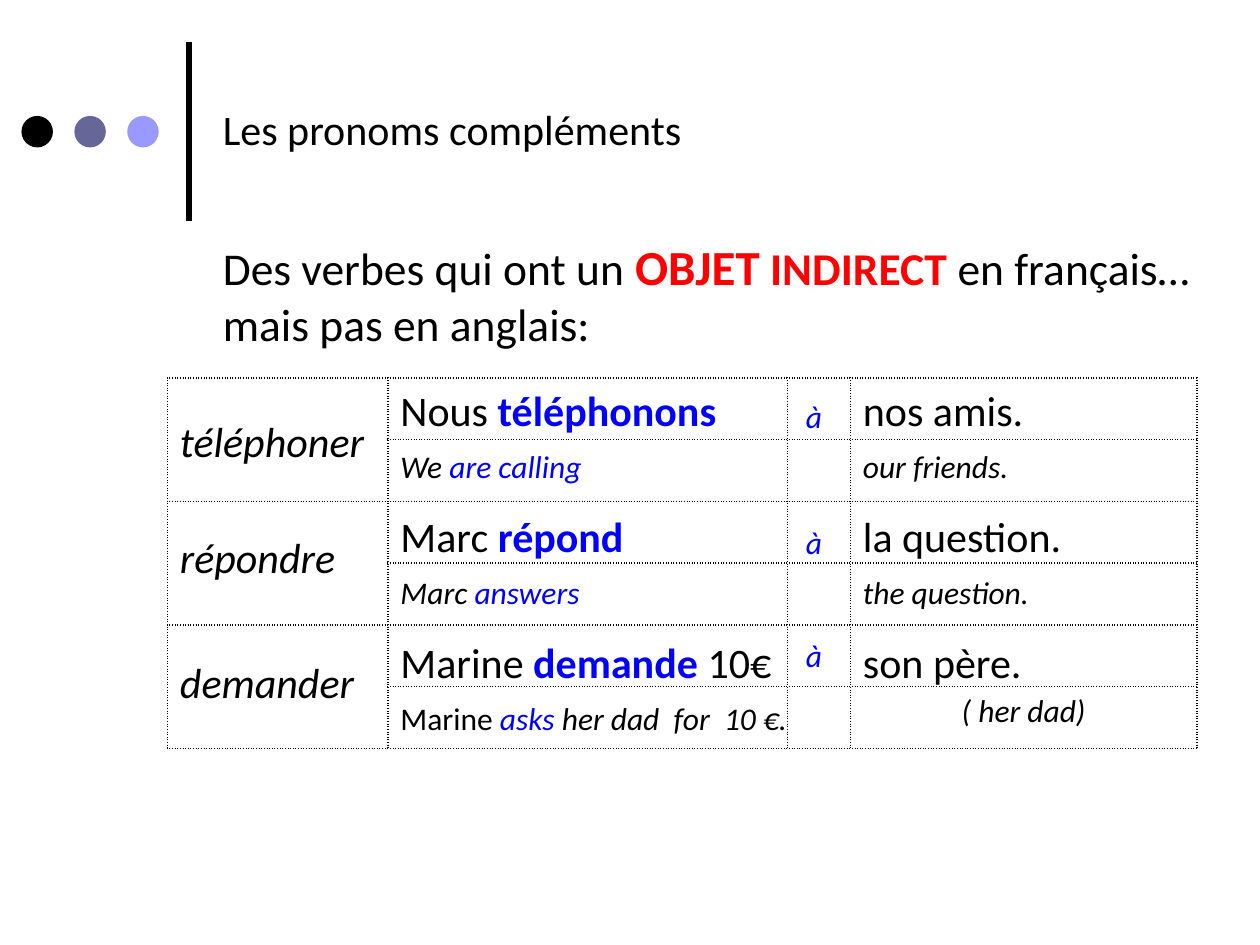
import pptx
import pptx.util
import pptx.dml.color
import pptx.enum.shapes
import pptx.enum.text
import pptx.oxml
import pptx.oxml.ns
from lxml import etree

Inches = pptx.util.Inches
Pt = pptx.util.Pt
RGBColor = pptx.dml.color.RGBColor
PP_ALIGN = pptx.enum.text.PP_ALIGN

BLACK = RGBColor(0x00, 0x00, 0x00)
SLATE = RGBColor(0x66, 0x66, 0x99)
LILAC = RGBColor(0x99, 0x99, 0xFF)
RED = RGBColor(0xFF, 0x00, 0x00)
BLUE = RGBColor(0x00, 0x00, 0xFF)
FONT = "Calibri"

# Each paragraph is a list of (text, format changes) runs.
TITLE = [[("Les pronoms compléments", {})]]
INTRO = [
    [("Des verbes qui ont un ", {}),
     ("OBJET", {"size": 28, "bold": True, "color": RED}),
     (" INDIRECT ", {"bold": True, "color": RED}),
     ("en français…", {})],
    [("mais pas en anglais:", {})],
]
VERB = {"color": BLUE, "bold": True}
GLOSS = {"color": BLUE}
EXAMPLES = [
    {"infinitive": "téléphoner", "infinitive_drop": 0.25, "preposition_drop": 0.1,
     "french": [("Nous ", {}), ("téléphonons", VERB)], "object": "nos amis.",
     "english": [("We ", {}), ("are calling", GLOSS)], "english_object": "our friends."},
    {"infinitive": "répondre", "infinitive_drop": 0.17, "preposition_drop": 0.1,
     "french": [("Marc ", {}), ("répond", VERB)], "object": "la question.",
     "english": [("Marc ", {}), ("answers", GLOSS)], "english_object": "the question."},
    {"infinitive": "demander", "infinitive_drop": 0.16, "preposition_drop": 0,
     "french": [("Marine ", {}), ("demande ", VERB), ("10€", {})], "object": "son père.",
     "english": [("Marine ", {"italic": False}), ("asks ", GLOSS),
                 ("her dad  for  10 €.", {})], "english_object": None},
]
LAST_CELL = [[("( her dad)", {})]]

TABLE_LEFT, TABLE_TOP = 1.33, 3
COLUMN_WIDTHS = [1.75, 3.17, 0.5, 2.75]
ROW_HEIGHT = 0.49
ROW_COUNT = 2 * len(EXAMPLES)
COLUMN_LEFTS = [TABLE_LEFT + sum(COLUMN_WIDTHS[:i]) for i in range(len(COLUMN_WIDTHS))]
EXAMPLE_PITCH = 1
ENGLISH_DROP = 0.5
DOT_SIZE, DOT_PITCH = 0.25, 0.42
HEADING_LEFT = 1.67


def write(frame, paragraphs, size=24, color=BLACK, bold=False, italic=False, align=PP_ALIGN.LEFT):
    for index, runs in enumerate(paragraphs):
        paragraph = frame.paragraphs[0] if index == 0 else frame.add_paragraph()
        paragraph.alignment = align
        for text, changes in runs:
            style = {"size": size, "color": color, "bold": bold, "italic": italic, **changes}
            run = paragraph.add_run()
            run.text = text
            run.font.name = FONT
            run.font.size = Pt(style["size"])
            run.font.color.rgb = style["color"]
            run.font.bold = style["bold"]
            run.font.italic = style["italic"]


def add_text(slide, left, top, width, height, paragraphs, **style):
    box = slide.shapes.add_textbox(Inches(left), Inches(top), Inches(width), Inches(height))
    box.text_frame.word_wrap = True
    box.text_frame.auto_size = pptx.enum.text.MSO_AUTO_SIZE.SHAPE_TO_FIT_TEXT
    write(box.text_frame, paragraphs, **style)


def add_ornament(slide):
    """Vertical rule with three dots on its left."""
    rule = slide.shapes.add_connector(pptx.enum.shapes.MSO_CONNECTOR.STRAIGHT,
                                      Inches(1.5), Inches(1.75), Inches(1.5), Inches(0.33))
    rule.line.color.rgb = BLACK
    rule.line.width = Pt(3)
    etree.SubElement(rule._element.spPr, pptx.oxml.ns.qn("a:effectLst"))
    for index, color in enumerate([BLACK, SLATE, LILAC]):
        dot = slide.shapes.add_shape(pptx.enum.shapes.MSO_SHAPE.OVAL,
                                     Inches(0.17 + index * DOT_PITCH), Inches(0.92),
                                     Inches(DOT_SIZE), Inches(DOT_SIZE))
        dot.shadow.inherit = False
        dot.fill.solid()
        dot.fill.fore_color.rgb = color
        dot.line.fill.background()


def add_dotted_borders(cell):
    properties = cell._tc.get_or_add_tcPr()
    for side in ("lnL", "lnR", "lnT", "lnB"):
        properties.append(pptx.oxml.parse_xml(
            f'<a:{side} {pptx.oxml.ns.nsdecls("a")} w="{Pt(1)}"><a:solidFill>'
            f'<a:srgbClr val="{BLACK}"/></a:solidFill><a:prstDash val="dot"/></a:{side}>'))


def add_grid(slide):
    table = slide.shapes.add_table(
        ROW_COUNT, len(COLUMN_WIDTHS), Inches(TABLE_LEFT), Inches(TABLE_TOP),
        Inches(sum(COLUMN_WIDTHS)), Inches(ROW_HEIGHT * ROW_COUNT)).table
    table.first_row = table.horz_banding = False
    for column, width in zip(table.columns, COLUMN_WIDTHS):
        column.width = Inches(width)
    for row in table.rows:
        row.height = Inches(ROW_HEIGHT)
        for cell in row.cells:
            add_dotted_borders(cell)
            cell.fill.background()
    for top_row in range(0, ROW_COUNT, 2):
        table.cell(top_row, 0).merge(table.cell(top_row + 1, 0))
    last_cell = table.cell(ROW_COUNT - 1, len(COLUMN_WIDTHS) - 1)
    write(last_cell.text_frame, LAST_CELL, size=18, italic=True, align=PP_ALIGN.CENTER)


def add_example(slide, example, top):
    infinitive_left, sentence_left, preposition_left, object_left = COLUMN_LEFTS
    english_top = top + ENGLISH_DROP
    add_text(slide, infinitive_left, top + example["infinitive_drop"], 1.67, 0.5,
             [[(example["infinitive"], {})]], italic=True)
    add_text(slide, sentence_left, top, 3.38, 0.5, [example["french"]])
    add_text(slide, preposition_left - 0.08, top + example["preposition_drop"], 0.58, 0.4,
             [[("à", {})]], size=18, color=BLUE, italic=True, align=PP_ALIGN.CENTER)
    add_text(slide, object_left, top, 2.58, 0.5, [[(example["object"], {})]])
    add_text(slide, sentence_left, english_top, 3.5, 0.4, [example["english"]],
             size=18, italic=True)
    if example["english_object"]:
        add_text(slide, object_left, english_top, 2.58, 0.4,
                 [[(example["english_object"], {})]], size=18, italic=True)


def main():
    presentation = pptx.Presentation()
    presentation.slide_width, presentation.slide_height = Inches(10), Inches(7.5)
    slide = presentation.slides.add_slide(presentation.slide_layouts[6])
    add_ornament(slide)
    add_text(slide, HEADING_LEFT, 0.77, 7.5, 0.51, TITLE)
    add_text(slide, HEADING_LEFT, 1.83, 8.33, 1.01, INTRO, size=26)
    add_grid(slide)
    for index, example in enumerate(EXAMPLES):
        add_example(slide, example, TABLE_TOP + index * EXAMPLE_PITCH)
    presentation.save("out.pptx")


if __name__ == "__main__":
    main()
